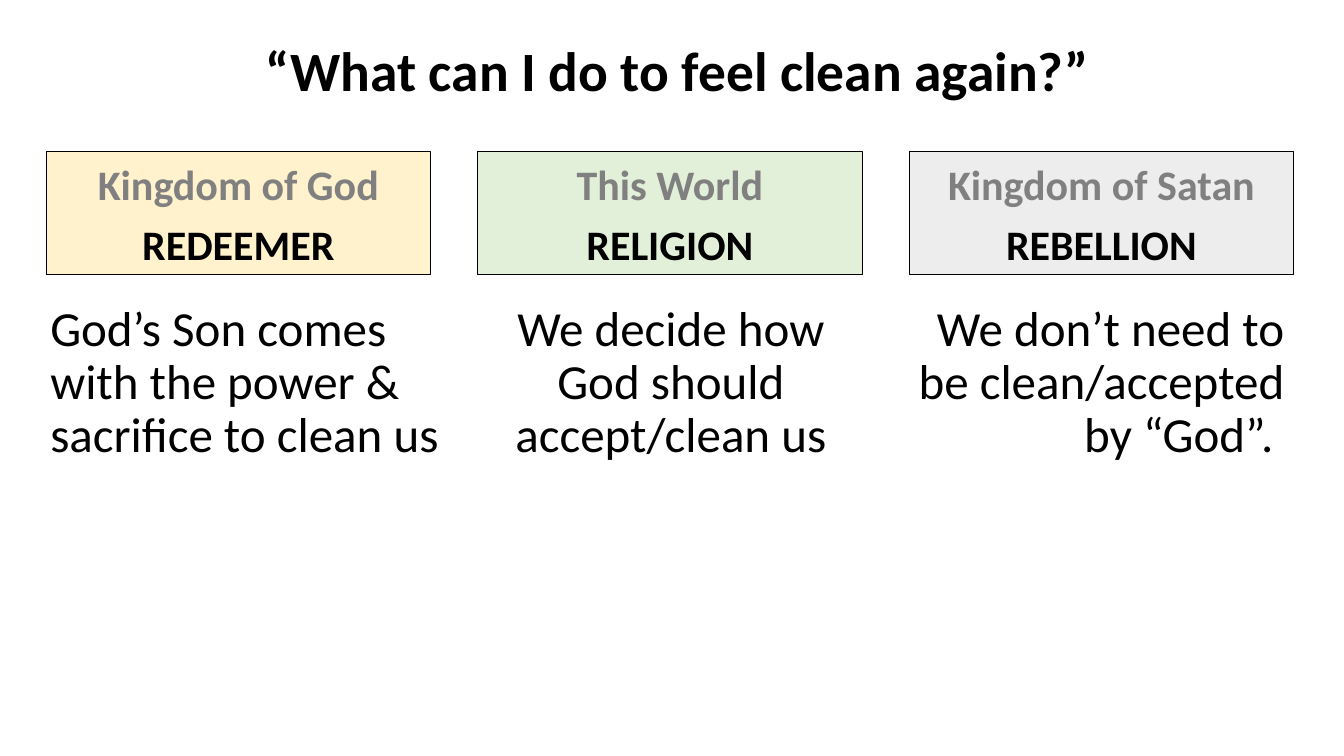
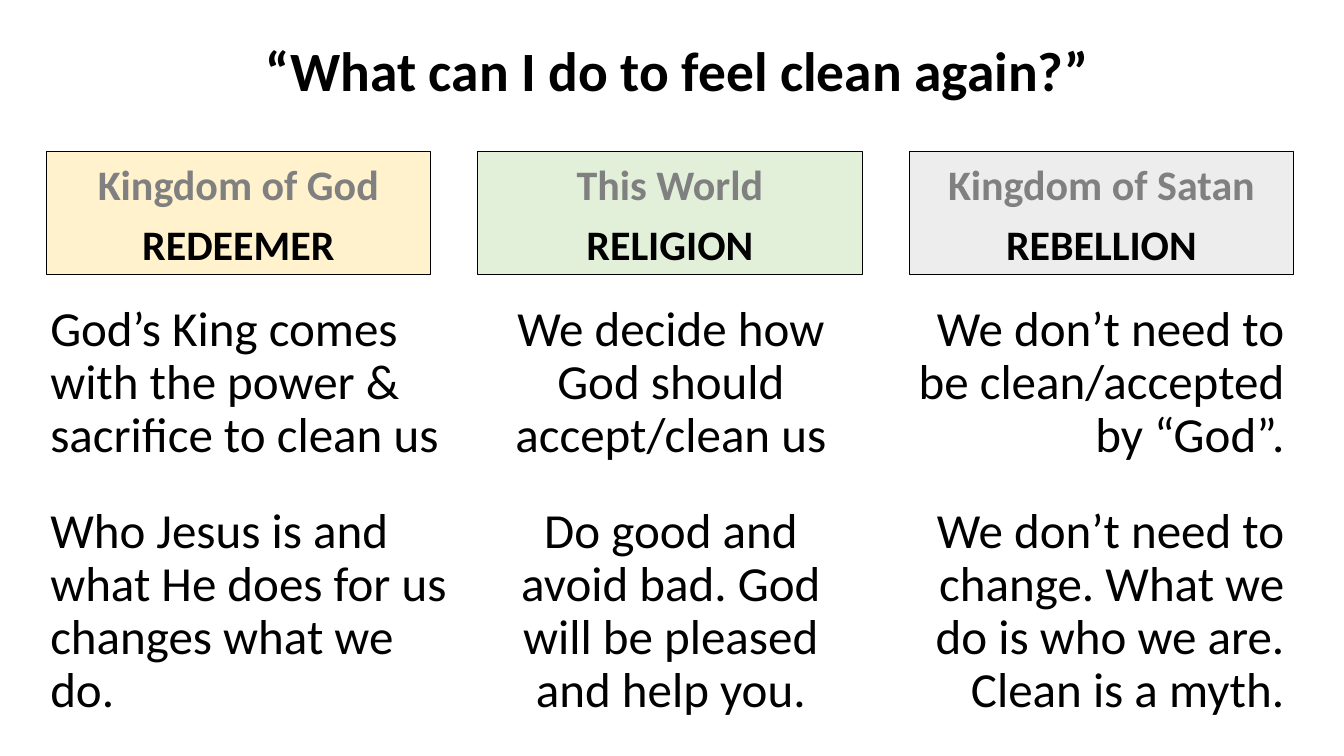
from pptx import Presentation
from pptx.dml.color import RGBColor
from pptx.enum.shapes import MSO_SHAPE as SHAPE
from pptx.enum.text import MSO_ANCHOR as ANCHOR, PP_ALIGN as ALIGN
from pptx.util import Inches, Pt

# Shared style
FONT, BLACK, GRAY = "Calibri", "000000", "808080"
TITLE = "“What can I do to feel clean again?”"

# Grid: three equal columns; title, heading and body rows (top, height)
COL_LEFT, COL_STEP, COL_WIDTH = 0.46, 4.28, 3.81
TITLE_BOX = (0.97, 0.37, 11.5, 0.72)
HEAD_ROW = (1.5, 1.22)
BODY_ROW = (2.97, 4.03)

# Heading lines, fill, body alignment, body shift from the column, body width
COLUMNS = [
    ("Kingdom of God", "REDEEMER", "FFF2CC", ALIGN.LEFT, -0.06, 4.15),
    ("This World", "RELIGION", "E2F0D9", ALIGN.CENTER, 0.16, 3.51),
    ("Kingdom of Satan", "REBELLION", "EDEDED", ALIGN.RIGHT, -0.12, 3.94),
]

# Body paragraphs of each column, slide by slide
SLIDES = [
    [
        ["God’s Son comes with the power & sacrifice to clean us"],
        ["We decide how God should accept/clean us"],
        ["We don’t need to be clean/accepted by “God”. "],
    ],
    [
        ["God’s King comes with the power & sacrifice to clean us",
         "Who Jesus is and what He does for us changes what we do."],
        ["We decide how God should accept/clean us",
         "Do good and avoid bad. God will be pleased and help you."],
        ["We don’t need to be clean/accepted by “God”.",
         "We don’t need to change. What we do is who we are. Clean is a myth."],
    ],
]


def rgb(color):
    return RGBColor.from_string(color)


def write(sp, lines, size, align, anchor, gap=0, bold=False, colors=(BLACK,)):
    """Fill a shape with paragraphs; the last colour serves all later lines."""
    tf = sp.text_frame
    tf.word_wrap = True
    tf.vertical_anchor = anchor
    tf.text = "\n".join(lines)
    for i, p in enumerate(tf.paragraphs):
        p.alignment = align
        p.line_spacing = 0.9
        p.space_before = Pt(gap if i else 0)
        font = p.runs[0].font
        font.name, font.size, font.bold = FONT, Pt(size), bold
        font.color.rgb = rgb(colors[min(i, len(colors) - 1)])


def add_text(s, box, lines, size, align, anchor=ANCHOR.TOP, **style):
    sp = s.shapes.add_textbox(*map(Inches, box))
    write(sp, lines, size, align, anchor, **style)


def add_heading(s, box, lines, fill):
    sp = s.shapes.add_shape(SHAPE.RECTANGLE, *map(Inches, box))
    sp.shadow.inherit = False
    sp.fill.solid()
    sp.fill.fore_color.rgb = rgb(fill)
    sp.line.color.rgb = rgb(BLACK)
    sp.line.width = Pt(0.75)
    write(sp, lines, 30, ALIGN.CENTER, ANCHOR.BOTTOM, gap=10, bold=True,
          colors=(GRAY, BLACK))


def add_column(s, left, column, body):
    realm, answer, fill, align, shift, width = column
    head_top, head_height = HEAD_ROW
    body_top, body_height = BODY_ROW
    add_heading(s, (left, head_top, COL_WIDTH, head_height), [realm, answer], fill)
    add_text(s, (left + shift, body_top, width, body_height), body, 35, align, gap=31)


def add_comparison(prs, bodies):
    s = prs.slides.add_slide(prs.slide_layouts[6])
    add_text(s, TITLE_BOX, [TITLE], 39.6, ALIGN.CENTER, ANCHOR.MIDDLE, bold=True)
    for i, (column, body) in enumerate(zip(COLUMNS, bodies)):
        add_column(s, COL_LEFT + i * COL_STEP, column, body)


def main():
    prs = Presentation()
    prs.slide_width, prs.slide_height = Inches(13.33), Inches(7.5)
    for bodies in SLIDES:
        add_comparison(prs, bodies)
    prs.save("out.pptx")


if __name__ == "__main__":
    main()
